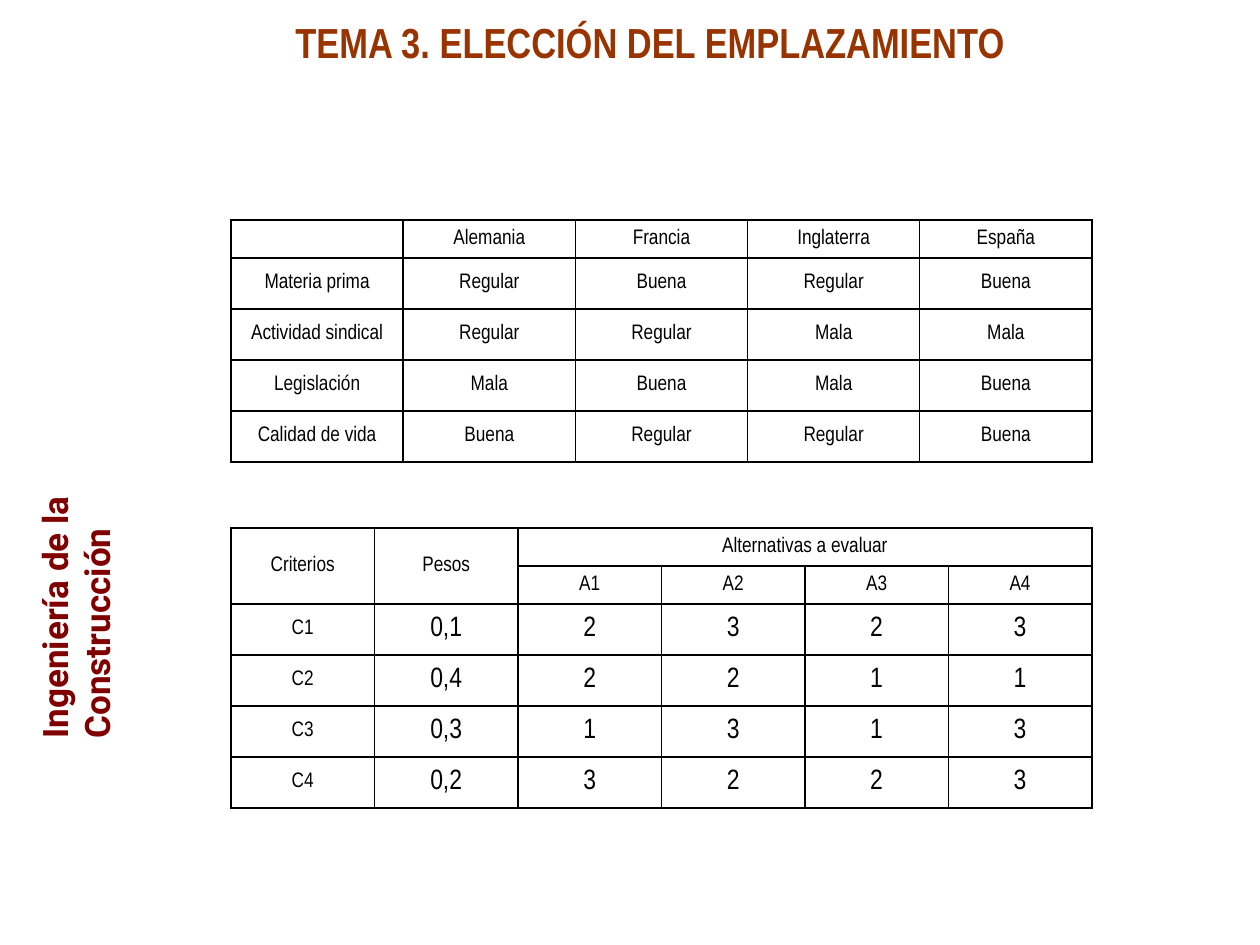
from dataclasses import dataclass

from lxml.etree import SubElement
from pptx import Presentation
from pptx.dml.color import RGBColor
from pptx.enum.text import MSO_ANCHOR, PP_ALIGN
from pptx.oxml.ns import qn
from pptx.util import Pt

PX = 914400 // 126


@dataclass(frozen=True)
class Theme:
    """Colours, fonts and type sizes of the slide."""
    title_color: str = "993300"
    side_color: str = "800000"
    ink: str = "000000"
    body_font: str = "Arial Narrow"
    side_font: str = "Roboto"
    title_size: int = 24
    side_size: int = 20
    cell_size: int = 12
    score_size: int = 16
    border_width: int = 1


THEME = Theme()
TABLE_LEFT, TABLE_WIDTH = 231, 861
HEADER_HEIGHT, ROW_HEIGHT = 38, 51

COUNTRIES = [
    ["", "Alemania", "Francia", "Inglaterra", "España"],
    ["Materia prima", "Regular", "Buena", "Regular", "Buena"],
    ["Actividad sindical", "Regular", "Regular", "Mala", "Mala"],
    ["Legislación", "Mala", "Buena", "Mala", "Buena"],
    ["Calidad de vida", "Buena", "Regular", "Regular", "Buena"],
]
SCORES = [
    ["Criterios", "Pesos", "Alternativas a evaluar", "", "", ""],
    ["", "", "A1", "A2", "A3", "A4"],
    ["C1", "0,1", "2", "3", "2", "3"],
    ["C2", "0,4", "2", "2", "1", "1"],
    ["C3", "0,3", "1", "3", "1", "3"],
    ["C4", "0,2", "3", "2", "2", "3"],
]
SCORE_MERGES = [((0, 0), (1, 0)), ((0, 1), (1, 1)), ((0, 2), (0, 5))]


def add_span(para, text, font, size, color, bold=False):
    """Add one formatted run to a paragraph."""
    span = para.add_run()
    span.text = text
    span.font.name = font
    span.font.size = Pt(size)
    span.font.bold = bold
    span.font.color.rgb = RGBColor.from_string(color)


def add_heading(page, bounds, text, font, size, color, rotation=0, wrap=False):
    """Add a bold text box, rotated if asked."""
    box = page.shapes.add_textbox(*(value * PX for value in bounds))
    box.rotation = rotation
    box.text_frame.word_wrap = wrap
    add_span(box.text_frame.paragraphs[0], text, font, size, color, bold=True)


def outline_cell(cell):
    """Draw the four borders of a cell and leave it unfilled."""
    properties = cell._tc.get_or_add_tcPr()
    for side in ("lnL", "lnR", "lnT", "lnB"):
        line = SubElement(properties, qn(f"a:{side}"), w=str(Pt(THEME.border_width)))
        fill = SubElement(line, qn("a:solidFill"))
        SubElement(fill, qn("a:srgbClr"), val=THEME.ink)
    cell.fill.background()


def fill_cell(cell, text, size):
    """Write centred text in a cell, or size its empty paragraph."""
    cell.vertical_anchor = MSO_ANCHOR.MIDDLE
    para = cell.text_frame.paragraphs[0]
    para.alignment = PP_ALIGN.CENTER
    if text:
        add_span(para, text, THEME.body_font, size, THEME.ink)
    else:
        SubElement(para._p, qn("a:endParaRPr"), sz=str(size * 100))
    outline_cell(cell)


def add_grid(page, top, rows, header_count, merges=(), score_column=None):
    """Add a bordered table with equal columns and low header rows."""
    heights = [HEADER_HEIGHT if index < header_count else ROW_HEIGHT
               for index in range(len(rows))]
    frame = page.shapes.add_table(
        len(rows), len(rows[0]), TABLE_LEFT * PX, top * PX,
        TABLE_WIDTH * PX, sum(heights) * PX)
    table = frame.table
    table.first_row = False
    table.horz_banding = False
    for row, height in zip(table.rows, heights):
        row.height = height * PX
    for row_index, row in enumerate(rows):
        for column_index, text in enumerate(row):
            is_score = (score_column is not None and row_index >= header_count
                        and column_index >= score_column)
            size = THEME.score_size if is_score else THEME.cell_size
            fill_cell(table.cell(row_index, column_index), text, size)
    for first, last in merges:
        table.cell(*first).merge(table.cell(*last))


def main():
    """Build the slide and save it."""
    deck = Presentation()
    deck.slide_width, deck.slide_height = 1260 * PX, 945 * PX
    page = deck.slides.add_slide(deck.slide_layouts[6])
    add_heading(page, (-169, 500, 447, 55), "Ingeniería de la Construcción",
                THEME.side_font, THEME.side_size, THEME.side_color,
                rotation=270, wrap=True)
    add_heading(page, (283, 10, 742, 63), "TEMA 3. ELECCIÓN DEL EMPLAZAMIENTO",
                THEME.body_font, THEME.title_size, THEME.title_color)
    add_grid(page, 220, COUNTRIES, header_count=1)
    add_grid(page, 528, SCORES, header_count=2, merges=SCORE_MERGES, score_column=1)
    deck.save("out.pptx")


if __name__ == "__main__":
    main()
